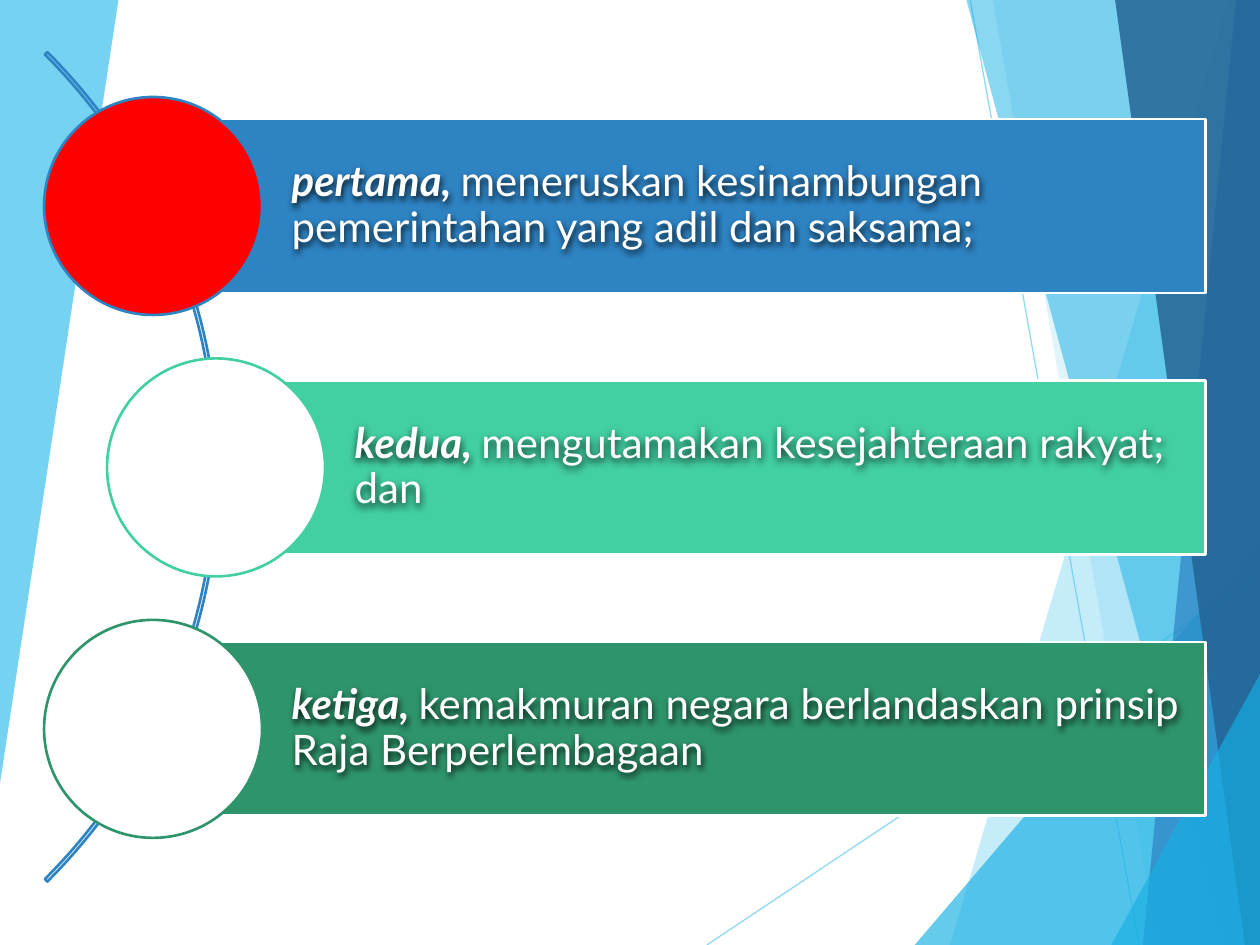
from dataclasses import dataclass

from lxml.etree import SubElement
from pptx import Presentation
from pptx.dml.color import RGBColor
from pptx.enum.shapes import MSO_CONNECTOR, MSO_SHAPE
from pptx.enum.text import MSO_ANCHOR
from pptx.oxml.ns import qn
from pptx.util import Inches, Pt


@dataclass(frozen=True)
class Theme:
    font: str = "Lato"
    text_size: int = 24
    outline: float = 1.5
    hairline: float = 0.75
    white: str = "FFFFFF"
    black: str = "000000"
    sky: str = "5FCBEF"
    cyan: str = "17B0E4"
    blue: str = "2E83C3"
    navy: str = "226292"
    mint: str = "42D0A2"
    green: str = "2E946B"
    red: str = "FF0000"


THEME = Theme()
W, H = 10, 7.5

# Corner points, colour and opacity in percent, from back to front
FACETS = [
    ([(9.75, 0), (7.54, H), (W, H), (W, 0)], THEME.sky, 36),
    ([(7.88, 0), (9.19, H), (W, H), (W, 0)], THEME.sky, 20),
    ([(7.26, H), (W, 4.29), (W, H)], THEME.cyan, 66),
    ([(7.67, 0), (9.7, H), (W, H), (W, 0)], THEME.cyan, 50),
    ([(9.81, 0), (9.07, H), (W, H), (W, 0)], THEME.blue, 70),
    ([(8.85, 0), (9.88, H), (W, H), (W, 0)], THEME.navy, 82),
    ([(8.82, H), (W, 5.35), (W, H)], THEME.cyan, 66),
    ([(0, 0), (0.94, 0), (0, 6.22)], THEME.sky, 85),
]
RAYS = [((5.61, H), (W, 4.57)), ((7.7, 0), (9.04, H))]

# Lead word, statement, bar colour, circle fill, circle outline, circle left
AIMS = [
    ("pertama, ", "meneruskan kesinambungan pemerintahan yang adil dan saksama;",
     THEME.blue, THEME.red, THEME.blue, 0.35),
    ("kedua, ", "mengutamakan kesejahteraan rakyat; dan",
     THEME.mint, THEME.white, THEME.mint, 0.85),
    ("ketiga, ", "kemakmuran negara berlandaskan prinsip Raja Berperlembagaan",
     THEME.green, THEME.white, THEME.green, 0.35),
]
ROW_TOP, ROW_PITCH = 0.77, 2.075
CIRCLE, BAR_HEIGHT, BAR_RIGHT = 1.73, 1.38, 9.57


def set_alpha(fill, percent):
    color = fill._xPr.find(qn("a:solidFill"))[0]
    SubElement(color, qn("a:alpha"), val=str(percent * 1000))


def paint(shape, fill=None, line=None):
    shape.shadow.inherit = False
    if fill:
        shape.fill.solid()
        shape.fill.fore_color.rgb = RGBColor.from_string(fill)
    else:
        shape.fill.background()
    if line:
        shape.line.color.rgb = RGBColor.from_string(line)
        shape.line.width = Pt(THEME.outline)
    else:
        shape.line.fill.background()


def add_preset(s, kind, box, fill=None, line=None):
    shape = s.shapes.add_shape(kind, *map(Inches, box))
    paint(shape, fill, line)
    return shape


def add_facet(s, points, color, opacity):
    corners = [(Inches(x), Inches(y)) for x, y in points]
    builder = s.shapes.build_freeform(*corners[0])
    builder.add_line_segments(corners[1:], close=True)
    shape = builder.convert_to_shape()
    paint(shape, color)
    set_alpha(shape.fill, opacity)


def add_ray(s, start, end):
    ray = s.shapes.add_connector(MSO_CONNECTOR.STRAIGHT, *map(Inches, start + end))
    ray.line.color.rgb = RGBColor.from_string(THEME.sky)
    ray.line.width = Pt(THEME.hairline)
    set_alpha(ray.line.fill, 70)
    SubElement(ray._element.spPr, qn("a:effectLst"))


def add_text_shadow(box):
    """Give an unfilled text box a soft shadow, which falls from its letters."""
    effects = SubElement(box._element.spPr, qn("a:effectLst"))
    shadow = SubElement(effects, qn("a:outerShdw"), blurRad=str(Pt(4)),
                        dist=str(Pt(1.5)), dir="5400000", rotWithShape="0")
    color = SubElement(shadow, qn("a:srgbClr"), val=THEME.black)
    SubElement(color, qn("a:alpha"), val="80000")


def add_statement(s, box, lead, statement):
    tb = s.shapes.add_textbox(*map(Inches, box))
    tf = tb.text_frame
    margin = Inches(0.07)
    settings = {
        "word_wrap": True, "vertical_anchor": MSO_ANCHOR.MIDDLE,
        "margin_left": Inches(1.1), "margin_right": margin,
        "margin_top": margin, "margin_bottom": margin,
    }
    for name, value in settings.items():
        setattr(tf, name, value)
    p = tf.paragraphs[0]
    p.line_spacing = 0.9
    for text, strong in ((lead, True), (statement, False)):
        r = p.add_run()
        r.text = text
        settings = {"name": THEME.font, "size": Pt(THEME.text_size),
                    "bold": strong, "italic": strong}
        for name, value in settings.items():
            setattr(r.font, name, value)
        r.font.color.rgb = RGBColor.from_string(THEME.white)
    add_text_shadow(tb)


def add_aim(s, top, lead, statement, bar_color, circle_fill, circle_line, left):
    bar_left = left + CIRCLE / 2
    bar = (bar_left, top + (CIRCLE - BAR_HEIGHT) / 2, BAR_RIGHT - bar_left, BAR_HEIGHT)
    add_preset(s, MSO_SHAPE.RECTANGLE, bar, bar_color, THEME.white)
    add_statement(s, bar, lead, statement)
    add_preset(s, MSO_SHAPE.OVAL, (left, top, CIRCLE, CIRCLE), circle_fill, circle_line)


def add_spine(s):
    arc = add_preset(s, MSO_SHAPE.BLOCK_ARC, (-7.57, -0.95, 9.31, 9.31), line=THEME.blue)
    for i, value in enumerate((189, 27, 0.003)):
        arc.adjustments[i] = value


def main():
    prs = Presentation()
    prs.slide_width, prs.slide_height = Inches(W), Inches(H)
    s = prs.slides.add_slide(prs.slide_layouts[6])
    for ray in RAYS:
        add_ray(s, *ray)
    for facet in FACETS:
        add_facet(s, *facet)
    add_spine(s)
    for i, aim in enumerate(AIMS):
        add_aim(s, ROW_TOP + i * ROW_PITCH, *aim)
    prs.save("out.pptx")


if __name__ == "__main__":
    main()
